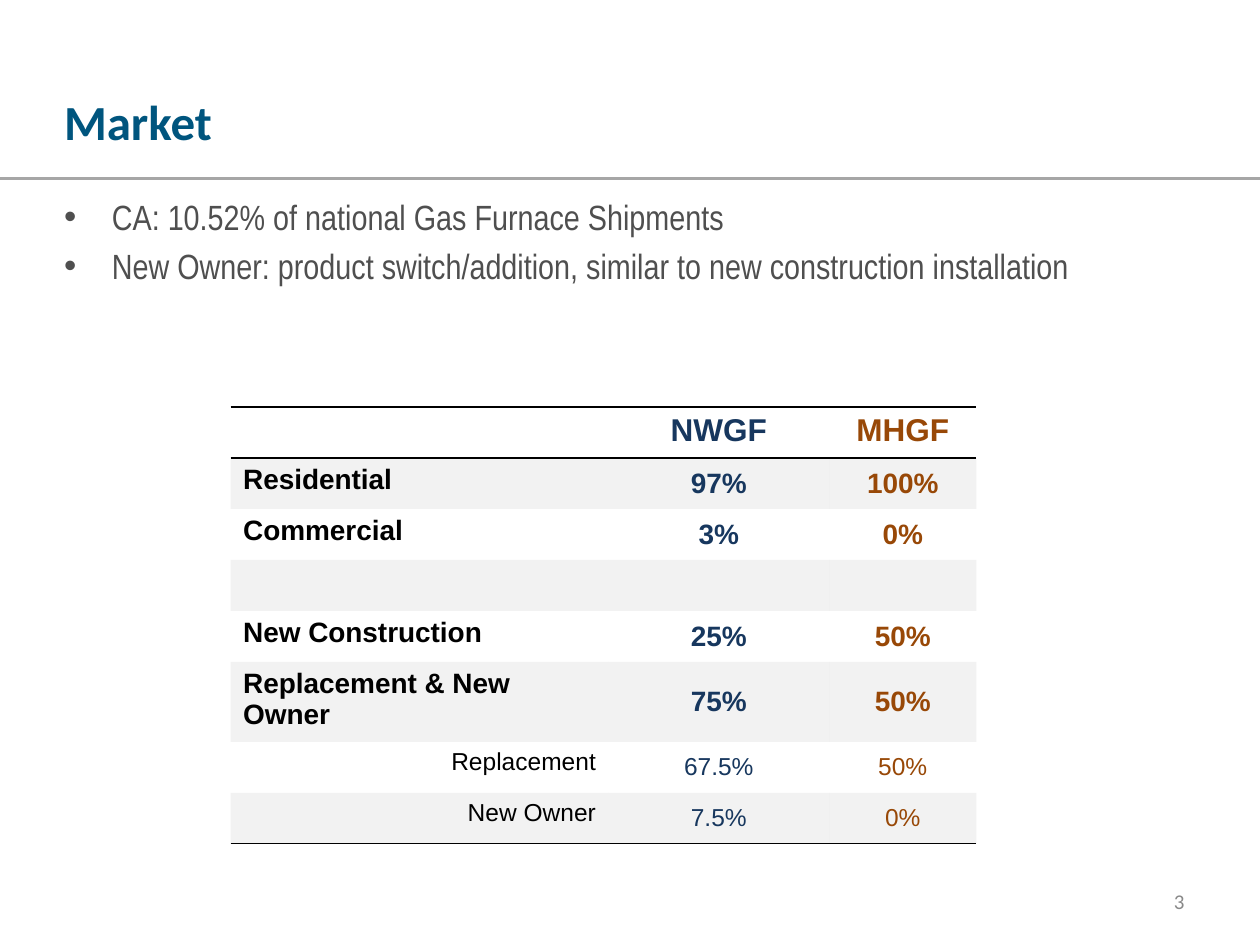
from lxml import etree
from pptx import Presentation
from pptx.dml.color import RGBColor
from pptx.enum.shapes import MSO_CONNECTOR
from pptx.enum.text import MSO_ANCHOR, PP_ALIGN
from pptx.oxml.ns import qn
from pptx.util import Inches, Pt

LEFT, CENTER, RIGHT = PP_ALIGN.LEFT, PP_ALIGN.CENTER, PP_ALIGN.RIGHT
TOP, MIDDLE = MSO_ANCHOR.TOP, MSO_ANCHOR.MIDDLE
STRAIGHT = MSO_CONNECTOR.STRAIGHT

BLACK = RGBColor(0x00, 0x00, 0x00)
TITLE_BLUE = RGBColor(0x00, 0x55, 0x7E)
BODY_GRAY = RGBColor(0x4F, 0x4F, 0x4F)
NUMBER_GRAY = RGBColor(0x89, 0x89, 0x89)
RULE_GRAY = RGBColor(0xA6, 0xA6, 0xA6)
BAND_GRAY = RGBColor(0xBF, 0xBF, 0xBF)
NAVY = RGBColor(0x17, 0x37, 0x5E)
BROWN = RGBColor(0x98, 0x48, 0x07)
NO_GRID_STYLE = "{2D5ABB26-0587-4C30-8999-92F81FD0307C}"

MARGIN = 0.41
RULE_Y = 1.42

prs = Presentation()
prs.slide_width, prs.slide_height = Inches(10), Inches(7.5)
slide = prs.slides.add_slide(prs.slide_layouts[6])


def add_text(box, lines, face, size, color, bold=False, anchor=TOP):
    frame = slide.shapes.add_textbox(*map(Inches, box)).text_frame
    frame.word_wrap = True
    frame.vertical_anchor = anchor
    frame.text = "\n".join(lines)
    for paragraph in frame.paragraphs:
        font = paragraph.runs[0].font
        font.name, font.size, font.bold = face, Pt(size), bold
        font.color.rgb = color
    return frame


def add_border(cell, side):
    props = cell._tc.get_or_add_tcPr()
    line = etree.Element(qn(f"a:{side}"), w=str(Pt(1)))
    fill = etree.SubElement(line, qn("a:solidFill"))
    etree.SubElement(fill, qn("a:srgbClr"), val=str(BLACK))
    props.insert(0, line)


# Rule below the title
rule = slide.shapes.add_connector(STRAIGHT, 0, Inches(RULE_Y), prs.slide_width, Inches(RULE_Y))
rule.line.color.rgb = RULE_GRAY
rule.line.width = Pt(1.75)
etree.SubElement(rule._element.spPr, qn("a:effectLst"))

# Slide number, title and bullets
number = add_text((7.17, 6.95, 2.33, 0.4), ["3"], "Calibri", 12, NUMBER_GRAY, anchor=MIDDLE)
number.paragraphs[0].alignment = RIGHT
add_text((MARGIN, 0.68, 7.79, 0.74), ["Market"], "Calibri", 28, TITLE_BLUE, bold=True)
bullets = add_text((MARGIN, 1.5, 8.92, 4.95), [
    "CA: 10.52% of national Gas Furnace Shipments",
    "New Owner: product switch/addition, similar to new construction installation",
], "Arial Narrow", 20, BODY_GRAY)
bullets.paragraphs[1].space_before = Pt(4)
for bullet in bullets.paragraphs:
    props = bullet._p.get_or_add_pPr()
    props.set("marL", str(Inches(0.38)))
    props.set("indent", str(-Inches(0.38)))
    etree.SubElement(props, qn("a:buFont"), typeface="Arial")
    etree.SubElement(props, qn("a:buChar"), char="•")

# Market shares: label, NWGF, MHGF
shares = [
    ("", "NWGF", "MHGF"),
    ("Residential", "97%", "100%"),
    ("Commercial", "3%", "0%"),
    ("", "", ""),
    ("New Construction", "25%", "50%"),
    ("Replacement & New Owner", "75%", "50%"),
    ("Replacement", "67.5%", "50%"),
    ("New Owner", "7.5%", "0%"),
]
HEADER, LAST, FIRST_DETAIL = 0, len(shares) - 1, 6
table = slide.shapes.add_table(
    len(shares), 3, Inches(1.83), Inches(3.23), Inches(5.92), Inches(3.24)).table
table.first_row = table.horz_banding = False
table._tbl.tblPr.find(qn("a:tableStyleId")).text = NO_GRID_STYLE
for column, width in zip(table.columns, (3, 1.75, 1.17)):
    column.width = Inches(width)

for r, row in enumerate(shares):
    detail = r >= FIRST_DETAIL
    size = 18 if r == HEADER else 14 if detail else 16
    for c, text in enumerate(row):
        cell = table.cell(r, c)
        if r in (HEADER, LAST):
            add_border(cell, "lnB")
        if r == HEADER:
            add_border(cell, "lnT")
        # Every second row is banded
        if r % 2:
            cell.fill.solid()
            cell.fill.fore_color.rgb = BAND_GRAY
            tint = cell._tc.tcPr.find(qn("a:solidFill"))[0]
            etree.SubElement(tint, qn("a:alpha"), val="20000")
        else:
            cell.fill.background()
        if not text:
            continue
        cell.text = text
        cell.vertical_anchor = MIDDLE if c and r != HEADER else TOP
        paragraph = cell.text_frame.paragraphs[0]
        paragraph.alignment = CENTER if c else RIGHT if detail else LEFT
        font = paragraph.runs[0].font
        font.name, font.size, font.bold = "Arial", Pt(size), not detail
        font.color.rgb = (BLACK, NAVY, BROWN)[c]

prs.save("out.pptx")
